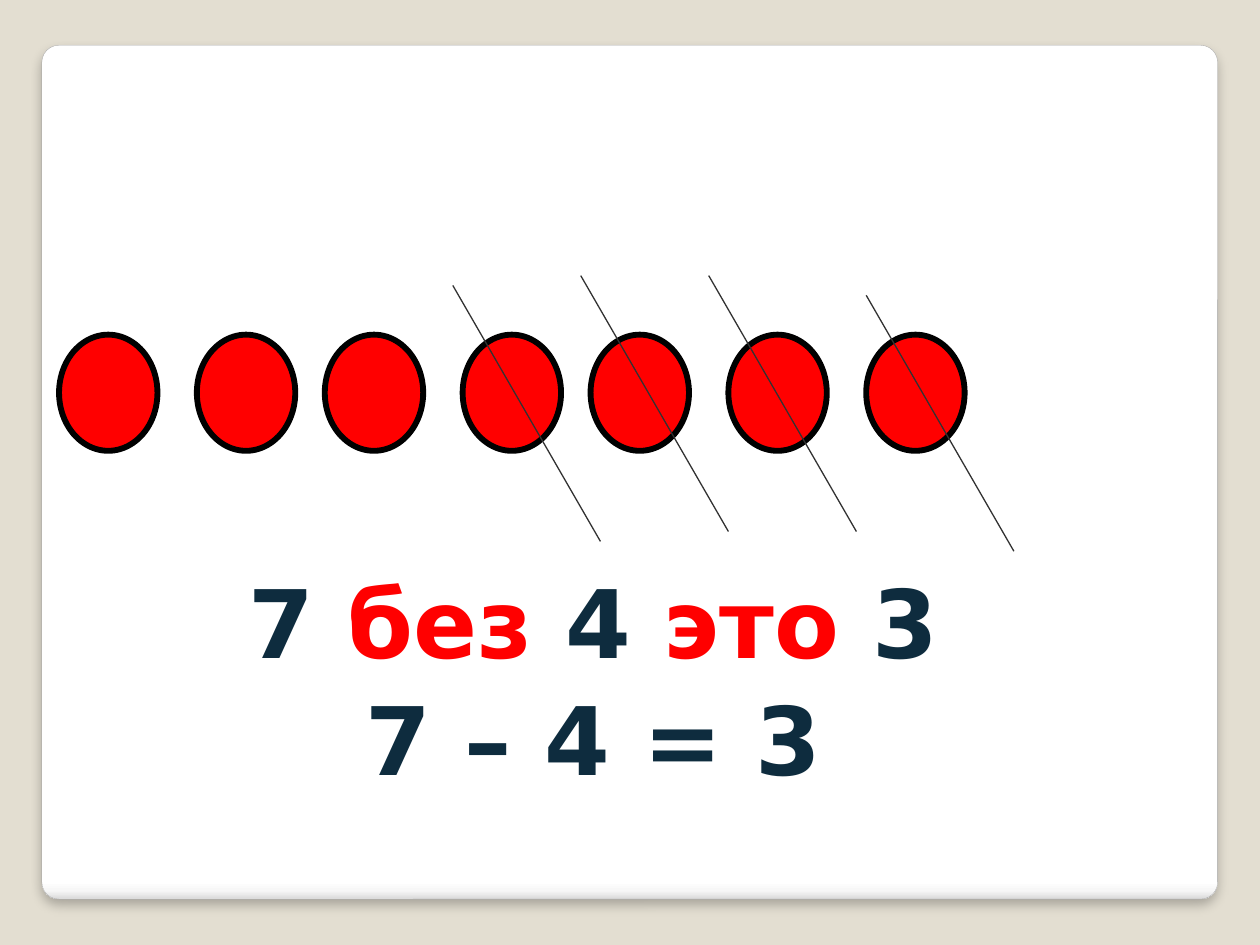
from lxml import etree
from pptx import Presentation, util as u
from pptx.dml.color import RGBColor
from pptx.enum import shapes, text
from pptx.oxml import parse_xml
from pptx.oxml.ns import nsdecls, qn

COLORS = {
    "background": "E3DED1", "panel": "FFFFFF", "panel_low": "F7F7F7",
    "panel_edge": "DADADA", "panel_line": "A4A4A4", "red": "FF0000",
    "black": "000000", "slash": "323232", "navy": "0E2C3E",
}


def color(name):
    return RGBColor.from_string(COLORS[name])


presentation = Presentation()
presentation.slide_width, presentation.slide_height = u.Inches(10), u.Inches(7.5)
cell = presentation.slide_width / 128


def grid(*values):
    return [round(value * cell) for value in values]


slide = presentation.slides.add_slide(presentation.slide_layouts[6])
slide.background.fill.solid()
slide.background.fill.fore_color.rgb = color("background")

panel = slide.shapes.add_shape(
    shapes.MSO_SHAPE.ROUNDED_RECTANGLE, *grid(4.25, 4.6, 119.45, 86.75))
panel.adjustments[0] = 0.02
panel.line.color.rgb = color("panel_line")
panel.line.width = u.Pt(0.16)
panel.fill.gradient()
panel.fill.gradient_angle = 270
stops = panel._element.spPr.find(qn("a:gradFill")).find(qn("a:gsLst"))
for stop in list(stops):
    stops.remove(stop)
for percent, name in [(0, "panel"), (98, "panel"), (99, "panel_low"), (100, "panel_edge")]:
    stop = etree.SubElement(stops, qn("a:gs"), pos=str(percent * 1000))
    etree.SubElement(stop, qn("a:srgbClr"), val=COLORS[name])
panel._element.spPr.append(parse_xml(
    f'<a:effectLst {nsdecls("a")}><a:outerShdw blurRad="{u.Pt(6)}" dist="{u.Pt(4)}" '
    f'dir="5400000" algn="tl" rotWithShape="0"><a:srgbClr val="{COLORS["black"]}">'
    '<a:alpha val="25000"/></a:srgbClr></a:outerShdw></a:effectLst>'))

for column in (6, 20, 33, 47, 60, 74, 88):
    circle = slide.shapes.add_shape(
        shapes.MSO_SHAPE.OVAL, *grid(column, 34, 10, 11.8))
    circle.shadow.inherit = False
    circle.fill.solid()
    circle.fill.fore_color.rgb = color("red")
    circle.line.color.rgb = color("black")
    circle.line.width = u.Pt(3.35)

for column, row in [(88, 30), (72, 28), (59, 28), (46, 29)]:
    slash = slide.shapes.add_connector(
        shapes.MSO_CONNECTOR.STRAIGHT, *grid(column, row, column + 15, row + 26))
    slash.line.color.rgb = color("slash")
    slash.line.width = u.Pt(0.75)
    etree.SubElement(slash._element.spPr, qn("a:effectLst"))

caption = slide.shapes.add_textbox(*grid(23.7, 56, 73.2, 36.2))
frame = caption.text_frame
frame.word_wrap = False
frame.margin_top = u.Inches(0.1)
lines = [
    [("7 ", "navy"), ("без ", "red"), ("4 ", "navy"), ("это ", "red"), ("3", "navy")],
    [("7 – 4 = 3", "navy")],
]
font_format = {"name": "DejaVu Sans", "size": u.Pt(54), "bold": True}
for index, line in enumerate(lines):
    paragraph = frame.add_paragraph() if index else frame.paragraphs[0]
    paragraph.alignment = text.PP_ALIGN.CENTER
    paragraph.space_before = u.Pt(2.4 * index)
    for words, name in line:
        run = paragraph.add_run()
        run.text = words
        run.font.color.rgb = color(name)
        for attribute, value in font_format.items():
            setattr(run.font, attribute, value)

presentation.save("out.pptx")
